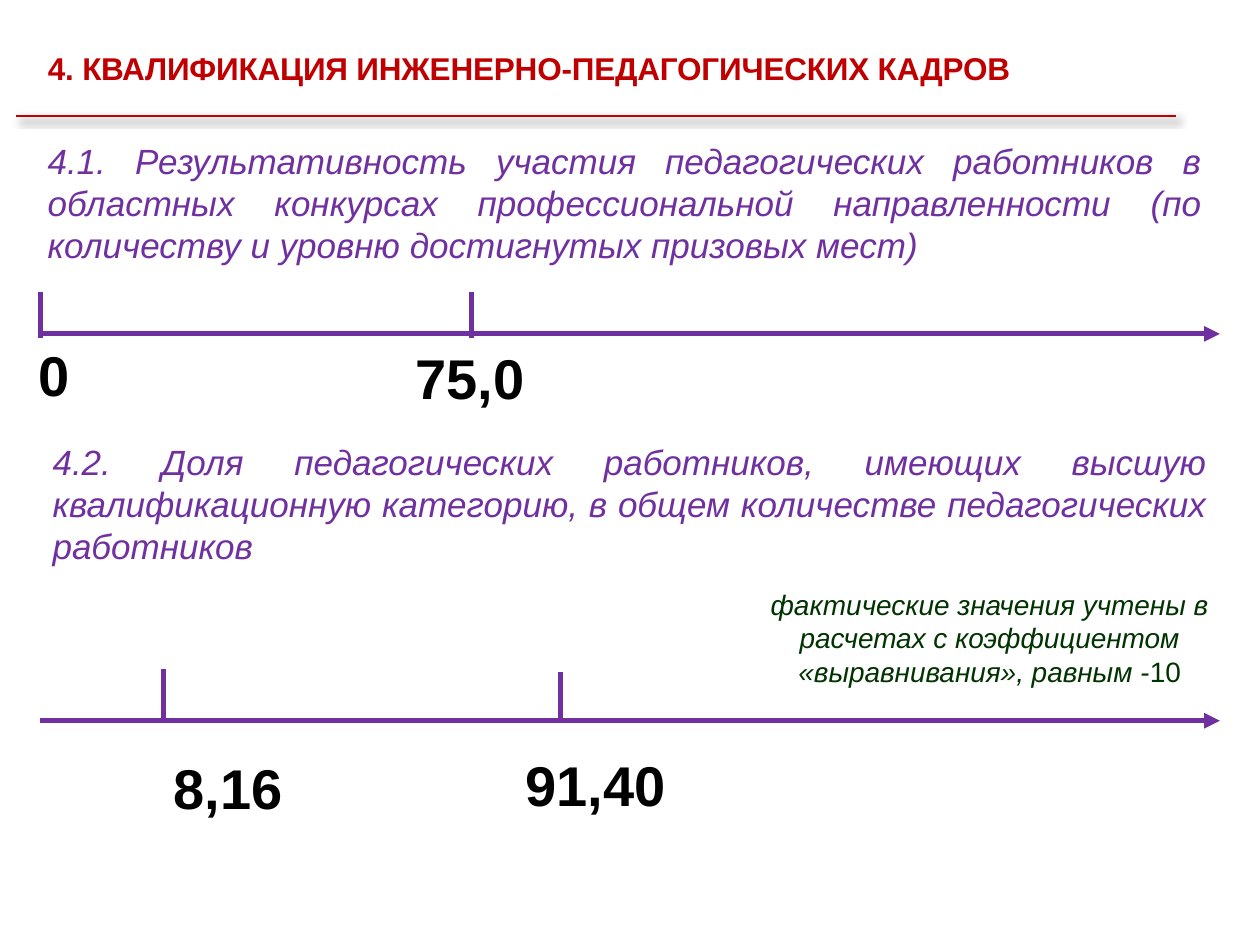
from lxml import etree
from pptx import Presentation
from pptx.dml.color import RGBColor
from pptx.enum.shapes import MSO_CONNECTOR
from pptx.enum.text import MSO_ANCHOR, MSO_AUTO_SIZE, PP_ALIGN
from pptx.oxml.ns import qn
from pptx.util import Cm, Pt

STRAIGHT = MSO_CONNECTOR.STRAIGHT
TOP = MSO_ANCHOR.TOP
FIT_SHAPE = MSO_AUTO_SIZE.SHAPE_TO_FIT_TEXT
LEFT, CENTER, JUSTIFY = PP_ALIGN.LEFT, PP_ALIGN.CENTER, PP_ALIGN.JUSTIFY
color = RGBColor.from_string
RED, PURPLE, GREEN, BLACK = "C00000", "7030A0", "003300", "000000"


def write_text(shape, box, runs, size, hex_color, align=LEFT, bold=False, wrap=True):
    """Place a shape and fill it with (text, italic) runs."""
    shape.left, shape.top, shape.width, shape.height = [Cm(value) for value in box]
    frame = shape.text_frame
    frame.word_wrap = wrap
    frame.auto_size = FIT_SHAPE
    frame.vertical_anchor = TOP
    paragraph = frame.paragraphs[0]
    paragraph.alignment = align
    for text, italic in runs:
        run = paragraph.add_run()
        run.text = text
        run.font.name = "Arial"
        run.font.size = Pt(size)
        run.font.bold = bold
        run.font.italic = italic
        run.font.color.rgb = color(hex_color)


def draw_line(x1, y1, x2, y2, hex_color, width):
    """Draw a line and return it with its empty effect list."""
    line = slide.shapes.add_connector(STRAIGHT, Cm(x1), Cm(y1), Cm(x2), Cm(y2))
    line.line.color.rgb = color(hex_color)
    line.line.width = Pt(width)
    effects = etree.SubElement(line._element.spPr, qn("a:effectLst"))
    return line, effects


presentation = Presentation()
presentation.slide_width = Cm(25.4)
presentation.slide_height = Cm(19.05)
slide = presentation.slides.add_slide(presentation.slide_layouts[5])

# Title
title = slide.shapes.title
write_text(title, (0.71, 0.86, 22.81, 1.02),
           [("4. КВАЛИФИКАЦИЯ ИНЖЕНЕРНО-ПЕДАГОГИЧЕСКИХ КАДРОВ", False)],
           18, RED, bold=True)
title.text_frame.paragraphs[0].runs[0].font._element.set("spc", "-10")

# Red rule with a soft shadow
rule, effects = draw_line(0.33, 2.34, 23.7, 2.34, RED, 1.5)
shadow = etree.SubElement(effects, qn("a:outerShdw"), blurRad=str(Pt(4)),
                          dist=str(Pt(3)), dir="2700000", algn="tl", rotWithShape="0")
shadow_color = etree.SubElement(shadow, qn("a:srgbClr"), val=BLACK)
etree.SubElement(shadow_color, qn("a:alpha"), val="40000")

# Indicator descriptions
descriptions = [
    (0.71, 2.69, "4.1. Результативность участия педагогических работников в областных "
                 "конкурсах профессиональной направленности (по количеству и уровню "
                 "достигнутых призовых мест)"),
    (0.81, 8.76, "4.2. Доля педагогических работников, имеющих высшую квалификационную "
                 "категорию, в общем количестве педагогических работников"),
]
for left, top, text in descriptions:
    box = slide.shapes.add_textbox(0, 0, 0, 0)
    write_text(box, (left, top, 23.77, 2.82), [(text, True)], 20, PURPLE, JUSTIFY)

# Scales: axis height, then ticks as (x, top, bottom)
scales = [
    (6.73, [(0.81, 5.89, 6.81), (9.5, 5.89, 6.81)]),
    (14.53, [(3.3, 13.49, 14.55), (11.3, 13.54, 14.55)]),
]
for axis_y, ticks in scales:
    for x, top, bottom in ticks:
        draw_line(x, top, x, bottom, PURPLE, 3)
    axis, _ = draw_line(0.81, axis_y, 24.59, axis_y, PURPLE, 3)
    etree.SubElement(axis.line._get_or_add_ln(), qn("a:tailEnd"), type="triangle")

# Values under the ticks
values = [
    ("0", 0.53, 6.73, 1.14),
    ("75,0", 8.13, 6.81, 2.72),
    ("8,16", 3.25, 15.06, 2.72),
    ("91,40", 10.34, 15.01, 3.35),
]
for text, left, top, width in values:
    box = slide.shapes.add_textbox(0, 0, 0, 0)
    write_text(box, (left, top, width, 1.63), [(text, False)], 32, BLACK,
               bold=True, wrap=False)

# Note on the levelling coefficient
note = slide.shapes.add_textbox(0, 0, 0, 0)
write_text(note, (14.5, 11.71, 10.9, 2.31),
           [("фактические значения учтены в расчетах с коэффициентом "
             "«выравнивания», равным -", True), ("10", False)],
           16, GREEN, CENTER)

presentation.save("out.pptx")
